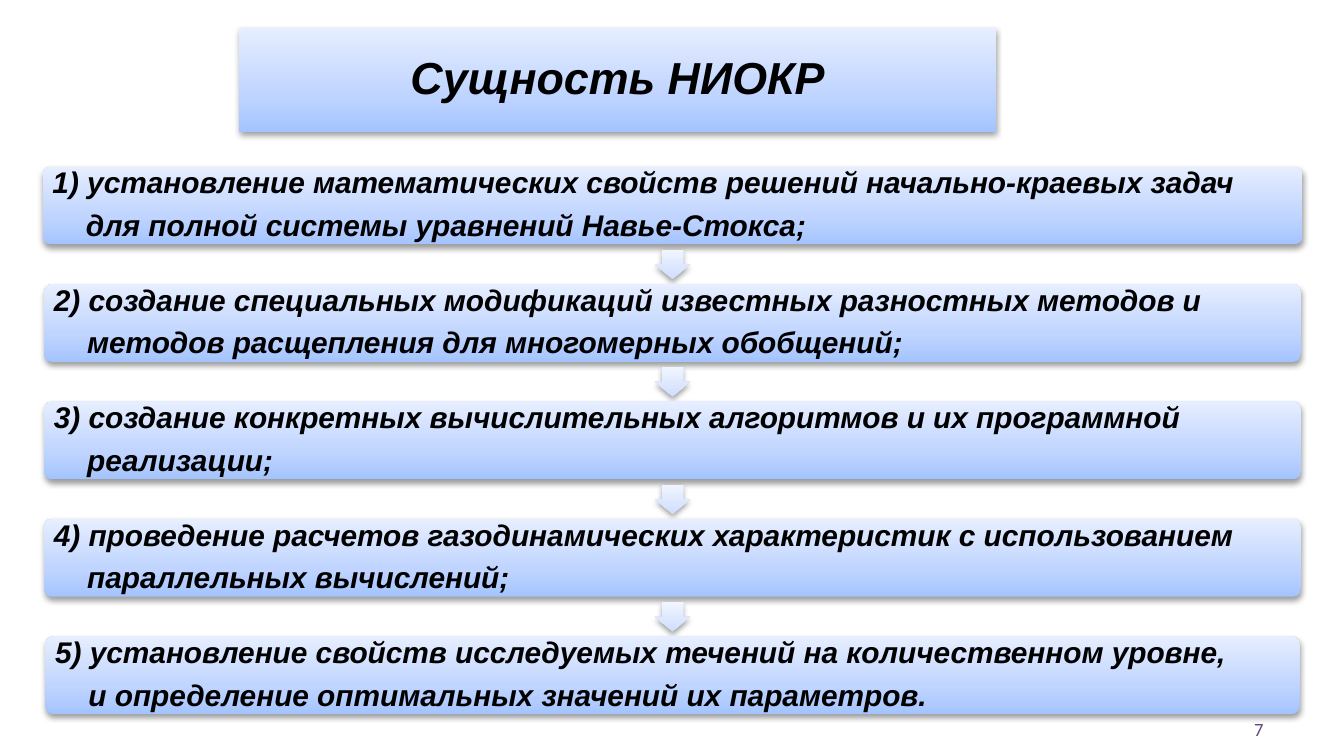
from lxml.etree import SubElement
from pptx import Presentation
from pptx.dml.color import RGBColor
from pptx.enum.shapes import MSO_SHAPE
from pptx.enum.text import MSO_ANCHOR, MSO_AUTO_SIZE, PP_ALIGN
from pptx.oxml.ns import qn
from pptx.util import Cm, Pt

BLACK = RGBColor(0x00, 0x00, 0x00)
PURPLE = RGBColor(0x60, 0x4A, 0x7B)
PANEL_GRADIENT = (
    (0, RGBColor(0xA4, 0xC4, 0xFF)),
    (35, RGBColor(0xBF, 0xD4, 0xFF)),
    (100, RGBColor(0xE6, 0xEE, 0xFF)),
)
ARROW_GRADIENT = (
    (0, RGBColor(0xCD, 0xDD, 0xFE)),
    (35, RGBColor(0xDB, 0xE6, 0xFE)),
    (100, RGBColor(0xF0, 0xF5, 0xFF)),
)

CENTER = 12.71
FIRST_TOP = 3.15
STEP = 2.22
STEP_HEIGHT = 1.47
ARROW_WIDTH, ARROW_HEIGHT = 0.56, 0.66
ARROW_OFFSET = 1.52

STAGES = (
    (23.8, "1) установление математических свойств решений начально-краевых задач",
     "для полной системы уравнений Навье-Стокса;"),
    (23.75, "2) создание специальных модификаций известных разностных методов и",
     "методов расщепления для многомерных обобщений;"),
    (23.75, "3) создание конкретных вычислительных алгоритмов и их программной",
     "реализации;"),
    (23.75, "4) проведение расчетов газодинамических характеристик с использованием",
     "параллельных вычислений;"),
    (23.7, "5) установление свойств исследуемых течений на количественном уровне,",
     "и определение оптимальных значений их параметров."),
)


class ProcessSlide:
    font_name = "Arial"
    number_font = "Calibri"
    continuation_indent = Cm(0.63)

    def __init__(self, presentation):
        self.slide = presentation.slides.add_slide(presentation.slide_layouts[5])

    def decorate(self, shape, gradient):
        shape.line.fill.background()
        shape.fill.gradient()
        properties = shape.element.spPr
        fill = properties.find(qn("a:gradFill"))
        for child in list(fill):
            fill.remove(child)
        fill.set("rotWithShape", "0")
        stops = SubElement(fill, qn("a:gsLst"))
        for position, color in gradient:
            stop = SubElement(stops, qn("a:gs"), pos=str(position * 1000))
            SubElement(stop, qn("a:srgbClr"), val=str(color))
        SubElement(fill, qn("a:lin"), ang="16200000", scaled="0")

        shape.shadow.inherit = False
        effects = properties.find(qn("a:effectLst"))
        shadow = SubElement(effects, qn("a:outerShdw"), blurRad="40000", dist="20000",
                            dir="5400000", rotWithShape="0")
        shade = SubElement(shadow, qn("a:srgbClr"), val=str(BLACK))
        SubElement(shade, qn("a:alpha"), val="38000")

    def label(self, shape, lines, size, alignment, inset):
        frame = shape.text_frame
        frame.text = "\n".join(lines)
        frame.word_wrap = True
        frame.auto_size = MSO_AUTO_SIZE.NONE
        frame.vertical_anchor = MSO_ANCHOR.MIDDLE
        frame.margin_left = frame.margin_right = Cm(inset)
        frame.margin_top = frame.margin_bottom = Cm(inset)
        for index, paragraph in enumerate(frame.paragraphs):
            paragraph.alignment = alignment
            paragraph.line_spacing = 0.9
            settings = paragraph._p.get_or_add_pPr()
            if index:
                settings.set("marL", str(self.continuation_indent))
                settings.set("indent", "0")
            after = SubElement(settings, qn("a:spcAft"))
            SubElement(after, qn("a:spcPct"), val="35000")
            for run in paragraph.runs:
                run.font.name = self.font_name
                run.font.size = Pt(size)
                run.font.bold = run.font.italic = True
                run.font.color.rgb = BLACK

    def title(self, text, left, top, width, height):
        heading = self.slide.shapes.title
        heading.left, heading.top = Cm(left), Cm(top)
        heading.width, heading.height = Cm(width), Cm(height)
        self.decorate(heading, PANEL_GRADIENT)
        self.label(heading, [text], 24, PP_ALIGN.CENTER, 0.05)

    def stage(self, lines, top, width):
        panel = self.slide.shapes.add_shape(
            MSO_SHAPE.ROUNDED_RECTANGLE, Cm(CENTER - width / 2), Cm(top),
            Cm(width), Cm(STEP_HEIGHT))
        panel.adjustments[0] = 0.1
        self.decorate(panel, PANEL_GRADIENT)
        self.label(panel, lines, 16, PP_ALIGN.LEFT, 0.14)

    def arrow(self, top):
        pointer = self.slide.shapes.add_shape(
            MSO_SHAPE.RIGHT_ARROW, Cm(CENTER - ARROW_WIDTH / 2), Cm(top),
            Cm(ARROW_WIDTH), Cm(ARROW_HEIGHT))
        pointer.rotation = 90
        pointer.adjustments[0] = 0.6
        pointer.adjustments[1] = 0.5
        self.decorate(pointer, ARROW_GRADIENT)

    def page_number(self, text, left, top, width, height):
        number = self.slide.shapes.add_textbox(Cm(left), Cm(top), Cm(width), Cm(height))
        frame = number.text_frame
        frame.word_wrap = True
        frame.vertical_anchor = MSO_ANCHOR.MIDDLE
        frame.text = text
        paragraph = frame.paragraphs[0]
        paragraph.alignment = PP_ALIGN.RIGHT
        font = paragraph.runs[0].font
        font.name = self.number_font
        font.size = Pt(10)
        font.color.rgb = PURPLE


def main():
    presentation = Presentation()
    presentation.slide_width, presentation.slide_height = Cm(25.4), Cm(14.29)
    process = ProcessSlide(presentation)
    process.title("Сущность НИОКР", 4.52, 0.53, 14.3, 1.96)
    process.page_number("7", 18.21, 13.41, 5.92, 0.76)
    for index, (width, *lines) in enumerate(STAGES):
        top = FIRST_TOP + index * STEP
        process.stage(lines, top, width)
        if index < len(STAGES) - 1:
            process.arrow(top + ARROW_OFFSET)
    presentation.save("out.pptx")


if __name__ == "__main__":
    main()
